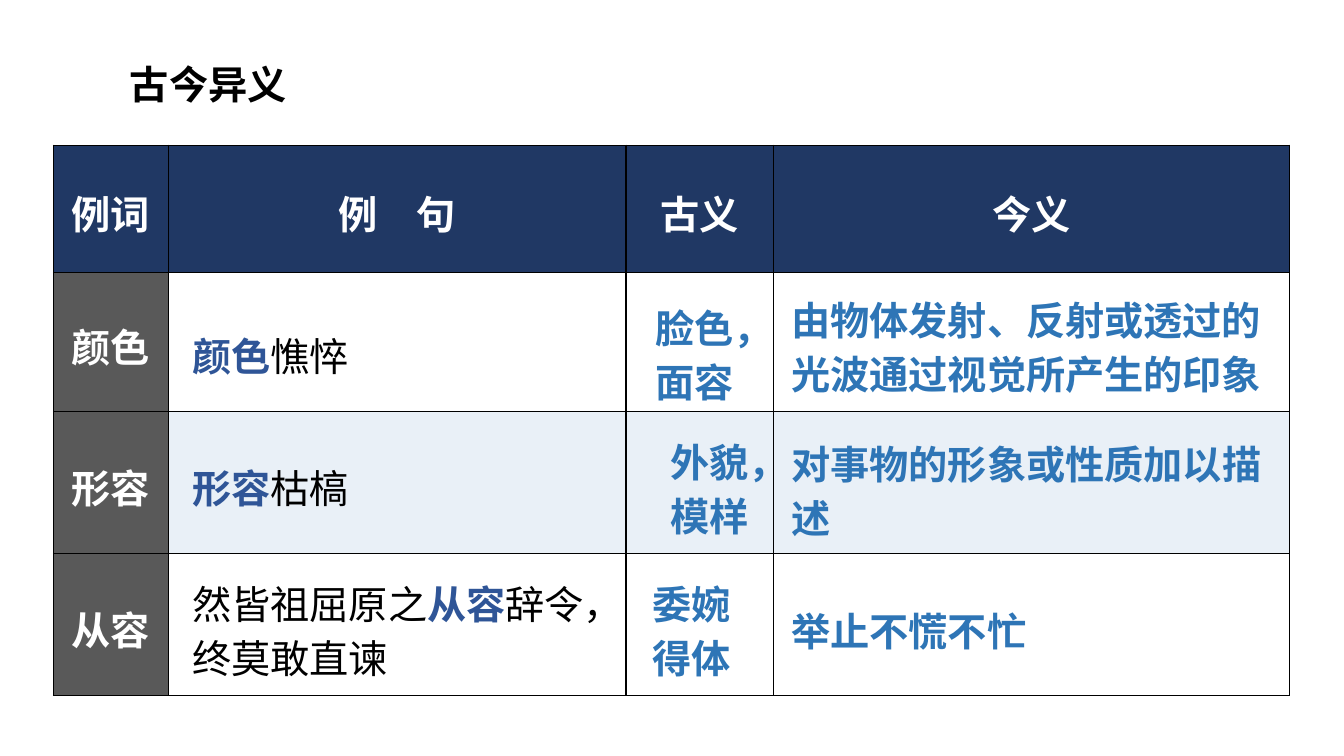
import pptx
import pptx.dml.color
import pptx.enum.lang
import pptx.enum.text
import pptx.oxml
import pptx.oxml.ns
import pptx.util
from dataclasses import dataclass
from typing import Any

Inches = pptx.util.Inches
Align = pptx.enum.text.PP_ALIGN


@dataclass(frozen=True)
class Theme:
    font: str = "Noto Sans CJK SC"
    size: int = 28
    line_spacing: float = 1.15
    title_spacing: float = 1.2
    black: str = "000000"
    white: str = "FFFFFF"
    header: str = "203864"
    word_cell: str = "595959"
    key_word: str = "2F5597"
    meaning: str = "2E75B6"
    tint_percent: int = 10
    border_width: int = 1


THEME = Theme()


@dataclass(frozen=True)
class Run:
    text: str
    color: str = THEME.meaning
    bold: bool = True


@dataclass(frozen=True)
class Label:
    left: float
    top: float
    width: float
    height: float
    runs: tuple[Run, ...]
    align: Any = Align.LEFT


def key(text: str) -> Run:
    return Run(text, THEME.key_word)


def plain(text: str) -> Run:
    return Run(text, THEME.black, False)


TITLE = Label(1.19, 0.43, 5.89, 0.57, (Run("古今异义", THEME.black),))
HEADINGS = ("例词", "例　句", "古义", "今义")
WORDS = ("颜色", "形容", "从容")
COLUMN_WIDTHS = (1.14, 4.54, 1.46, 5.12)
ROW_HEIGHTS = (1.26, 1.38, 1.41, 1.41)
TABLE_LEFT, TABLE_TOP = 0.53, 1.44
SENTENCE_LEFT, MODERN_LEFT = 1.81, 7.75

LABELS = (
    Label(SENTENCE_LEFT, 3.18, 4.76, 0.57, (key("颜色"), plain("憔悴"))),
    Label(SENTENCE_LEFT, 4.49, 4.76, 0.57, (key("形容"), plain("枯槁"))),
    Label(SENTENCE_LEFT, 5.64, 4.16, 1.12,
          (plain("然皆祖屈原之"), key("从容"), plain("辞令，终莫敢直谏"))),
    Label(6.4, 2.9, 1.18, 1.12, (Run("脸色，面容"),)),
    Label(6.5, 4.23, 1.07, 1.13, (Run("外貌，模样"),), Align.CENTER),
    Label(6.27, 5.64, 1.18, 1.12, (Run("委婉得体"),), Align.CENTER),
    Label(MODERN_LEFT, 2.82, 4.94, 1.12,
          (Run("由物体发射、反射或透过的光波通过视觉所产生的印象"),)),
    Label(MODERN_LEFT, 4.25, 5.02, 1.12, (Run("对事物的形象或性质加以描述"),)),
    Label(MODERN_LEFT, 5.91, 4.35, 0.57, (Run("举止不慌不忙"),)),
)


def write_runs(paragraph: Any, runs: tuple[Run, ...], align: Any,
               line_spacing: float = THEME.line_spacing) -> None:
    paragraph.alignment = align
    paragraph.line_spacing = line_spacing
    for item in runs:
        run = paragraph.add_run()
        run.text = item.text
        font = run.font
        font.name = THEME.font
        font.size = pptx.util.Pt(THEME.size)
        font.bold = item.bold
        font.color.rgb = pptx.dml.color.RGBColor.from_string(item.color)
        font.language_id = pptx.enum.lang.MSO_LANGUAGE_ID.SIMPLIFIED_CHINESE
        latin = font._element.find(pptx.oxml.ns.qn("a:latin"))
        latin.addnext(pptx.oxml.parse_xml(
            f'<a:ea {pptx.oxml.ns.nsdecls("a")} typeface="{THEME.font}"/>'))


def add_label(slide: Any, label: Label, line_spacing: float = THEME.line_spacing) -> Any:
    box = slide.shapes.add_textbox(Inches(label.left), Inches(label.top),
                                   Inches(label.width), Inches(label.height))
    frame = box.text_frame
    frame.word_wrap = True
    write_runs(frame.paragraphs[0], label.runs, label.align, line_spacing)
    return frame


def style_cell(cell: Any, color: str, opacity: int = 100) -> None:
    """Draw the cell's borders, then its fill, in the order the schema asks for."""
    properties = cell._tc.get_or_add_tcPr()
    for side in ("lnL", "lnR", "lnT", "lnB"):
        properties.append(pptx.oxml.parse_xml(
            f'<a:{side} {pptx.oxml.ns.nsdecls("a")} w="{pptx.util.Pt(THEME.border_width)}">'
            f'<a:solidFill><a:srgbClr val="{THEME.black}"/></a:solidFill></a:{side}>'))
    cell.fill.solid()
    cell.fill.fore_color.rgb = pptx.dml.color.RGBColor.from_string(color)
    if opacity < 100:
        color_element = next(properties.find(pptx.oxml.ns.qn("a:solidFill")).iterchildren())
        color_element.append(pptx.oxml.parse_xml(
            f'<a:alpha {pptx.oxml.ns.nsdecls("a")} val="{opacity * 1000}"/>'))


def write_cell(cell: Any, text: str) -> None:
    cell.margin_left = cell.margin_right = cell.margin_top = cell.margin_bottom = 0
    cell.vertical_anchor = pptx.enum.text.MSO_ANCHOR.MIDDLE
    write_runs(cell.text_frame.paragraphs[0], (Run(text, THEME.white),), Align.CENTER)


def add_word_table(slide: Any) -> None:
    table = slide.shapes.add_table(
        len(ROW_HEIGHTS), len(COLUMN_WIDTHS), Inches(TABLE_LEFT), Inches(TABLE_TOP),
        Inches(sum(COLUMN_WIDTHS)), Inches(sum(ROW_HEIGHTS))).table
    for column, width in zip(table.columns, COLUMN_WIDTHS):
        column.width = Inches(width)
    for row, height in zip(table.rows, ROW_HEIGHTS):
        row.height = Inches(height)
    for column, heading in enumerate(HEADINGS):
        style_cell(table.cell(0, column), THEME.header)
        write_cell(table.cell(0, column), heading)
    for row, word in enumerate(WORDS, start=1):
        style_cell(table.cell(row, 0), THEME.word_cell)
        write_cell(table.cell(row, 0), word)
        tint = THEME.white if row % 2 else THEME.meaning
        for column in range(1, len(HEADINGS)):
            style_cell(table.cell(row, column), tint, THEME.tint_percent)


def main() -> None:
    presentation = pptx.Presentation()
    presentation.slide_width = Inches(13.33)
    presentation.slide_height = Inches(7.5)
    slide = presentation.slides.add_slide(presentation.slide_layouts[6])
    title_frame = add_label(slide, TITLE, THEME.title_spacing)
    title_frame.margin_top = Inches(0.08)
    add_word_table(slide)
    for label in LABELS:
        frame = add_label(slide, label)
        frame.auto_size = pptx.enum.text.MSO_AUTO_SIZE.SHAPE_TO_FIT_TEXT
    presentation.save("out.pptx")


if __name__ == "__main__":
    main()
